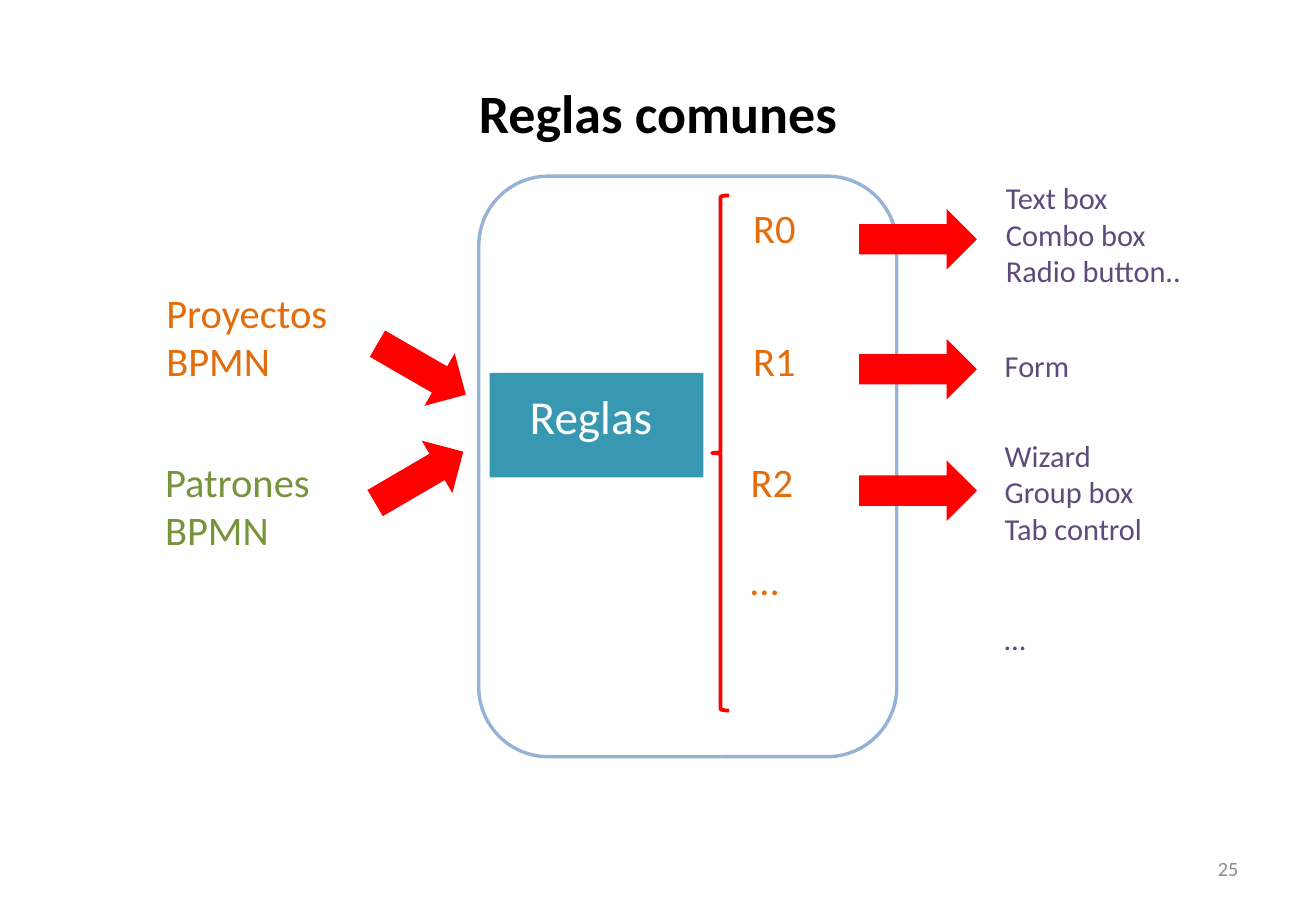
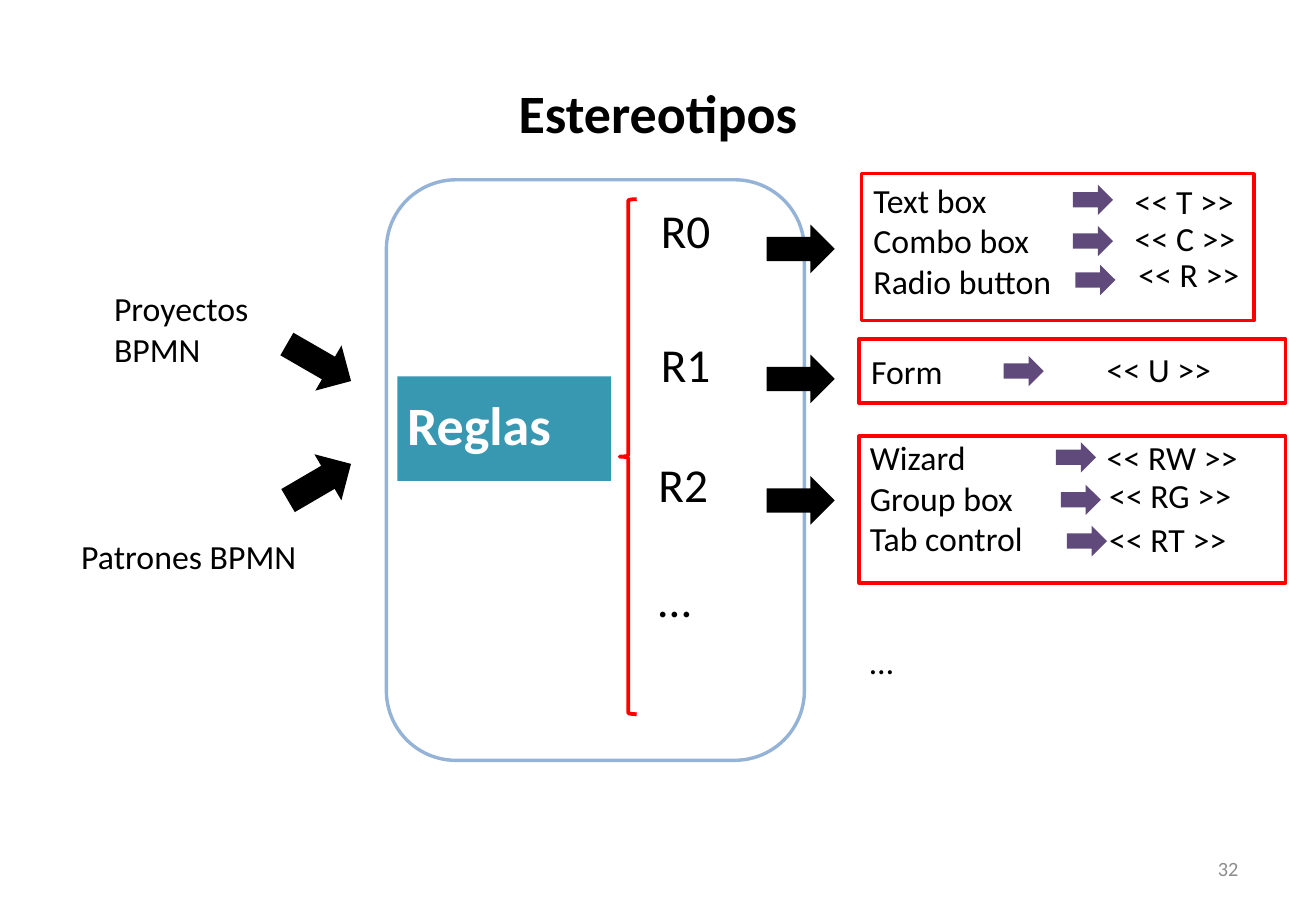
from pptx import Presentation
from pptx.dml.color import RGBColor
from pptx.enum import shapes, text
from pptx.util import Inches, Pt

FONT = "Calibri"
LINE_HEIGHT = 1.22  # of the font size
COLORS = {
    "black": "000000", "white": "FFFFFF", "grey": "8C8C8C", "red": "FF0000",
    "teal": "3898B2", "frame": "95B3D7", "orange": "E46C0A",
    "green": "77933C", "purple": "604A7B",
}
SHAPE = shapes.MSO_SHAPE
ALIGN = text.PP_ALIGN
ANCHOR = text.MSO_ANCHOR


def rgb(name):
    return RGBColor.from_string(COLORS[name])


def write(frame, lines, size, color, bold=False, align=ALIGN.LEFT, skip=0):
    """Fill a text frame; skip is the number of lines left free above the last one."""
    for index, line in enumerate(lines):
        para = frame.paragraphs[0] if index == 0 else frame.add_paragraph()
        para.text = line
        para.alignment = align
        para.font.name, para.font.size, para.font.bold = FONT, Pt(size), bold
        para.font.color.rgb = rgb(color)
    if skip:
        para.space_before = Pt(round(skip * size * LINE_HEIGHT, 1))


def add_text(page, box, lines, size, color, anchor=ANCHOR.TOP, **style):
    frame = page.shapes.add_textbox(*map(Inches, box)).text_frame
    frame.word_wrap = True
    frame.vertical_anchor = anchor
    write(frame, lines, size, color, **style)


def add_shape(page, kind, box, fill=None, line=None, width=2, angle=0):
    shape = page.shapes.add_shape(kind, *map(Inches, box))
    shape.shadow.inherit = False
    shape.rotation = angle
    if fill:
        shape.fill.solid()
        shape.fill.fore_color.rgb = rgb(fill)
    else:
        shape.fill.background()
    if line:
        shape.line.color.rgb = rgb(line)
        shape.line.width = Pt(width)
    else:
        shape.line.fill.background()
    return shape


def add_arrow(page, box, color, angle=0):
    add_shape(page, SHAPE.RIGHT_ARROW, box, fill=color, angle=angle)


def start_page(deck, title, number):
    """Blank page with the shared title and page number."""
    page = deck.slides.add_slide(deck.slide_layouts[6])
    add_text(page, (0.54, 0.3, 9.75, 1.25), [title], 32, "black",
             anchor=ANCHOR.MIDDLE, bold=True, align=ALIGN.CENTER)
    add_text(page, (7.76, 6.95, 2.53, 0.4), [number], 12, "grey",
             anchor=ANCHOR.MIDDLE, align=ALIGN.RIGHT)
    return page


def add_inputs(page, labels, arrows, size, color):
    """Labels (left, top, lines, colour) and the slanted arrows to the rules."""
    for left, top, lines, label_color in labels:
        height = 0.1 + len(lines) * size * LINE_HEIGHT / 72
        add_text(page, (left, top, 2.72, height), lines, size, label_color)
    for box, angle in zip(arrows, (30, 329.7)):
        add_arrow(page, box, color, angle)


def add_rules(page, left, top, heading, labels, arrows):
    """Rounded frame holding the heading block, the brace and the rules."""
    block = add_shape(page, SHAPE.RECTANGLE, (left + 0.09, top + 1.62, 1.76, 0.86),
                      fill="teal")
    frame = block.text_frame
    frame.vertical_anchor = ANCHOR.TOP
    frame.margin_left, frame.margin_top = Inches(heading["inset"]), Inches(0.12)
    write(frame, ["Reglas"], heading["size"], "white", bold=heading["bold"])

    add_shape(page, SHAPE.ROUNDED_RECTANGLE, (left, top, 3.44, 4.78), line="frame")
    add_shape(page, SHAPE.LEFT_BRACE, (left + 1.92, top + 0.16, 0.14, 4.24),
              line="red", width=2.25)

    # Rules, the last one followed by an ellipsis
    rules = ((2.16, 0, ["R0"], 0), (2.16, 1.1, ["R1"], 0), (2.14, 2.09, ["R2", "…"], 1))
    for shift, drop, lines, skip in rules:
        add_text(page, (left + shift, top + labels["top"] + drop, 1.3, 0.5),
                 lines, labels["size"], labels["color"], skip=skip)

    # Arrows leaving the frame
    width, height = arrows["size"]
    for drop in (0, 1.07, 2.07):
        add_arrow(page, (left + 3.13, top + arrows["top"] + drop, width, height),
                  arrows["color"])


def add_outputs(page, groups, size, color):
    """Interface elements: (left, top, lines, free lines above the last)."""
    for left, top, lines, skip in groups:
        height = 0.1 + (len(lines) + skip) * size * LINE_HEIGHT / 72
        add_text(page, (left, top, 2.34, height), lines, size, color, skip=skip)


def add_stereotypes(page, box, tags):
    """Red box whose tags are (arrow x, arrow y, tag x, tag y, name) inside it."""
    left, top = box[:2]
    for arrow_x, arrow_y, tag_x, tag_y, name in tags:
        add_text(page, (left + tag_x, top + tag_y, 1.5, 0.44), [f"<< {name} >>"],
                 20, "black")
        add_arrow(page, (left + arrow_x, top + arrow_y, 0.33, 0.25), "purple")
    add_shape(page, SHAPE.RECTANGLE, box, line="red")


def build_common_rules(deck):
    page = start_page(deck, "Reglas comunes", "25")
    add_inputs(page,
               [(1.27, 2.32, ["Proyectos", "BPMN"], "orange"),
                (1.26, 3.71, ["Patrones", "BPMN"], "green")],
               [(3.05, 2.79, 0.84, 0.5), (3.03, 3.68, 0.84, 0.5)], 24, "red")
    add_rules(page, 3.94, 1.45,
              heading={"inset": 0.33, "size": 28, "bold": False},
              labels={"top": 0.17, "size": 24, "color": "orange"},
              arrows={"top": 0.27, "size": (0.97, 0.5), "color": "red"})
    add_outputs(page,
                [(8.18, 1.43, ["Text box", "Combo box", "Radio button.."], 0),
                 (8.17, 2.81, ["Form"], 0),
                 (8.17, 3.55, ["Wizard", "Group box", "Tab control", "…"], 2)],
                18, "purple")


def build_stereotypes(deck):
    page = start_page(deck, "Estereotipos", "32")
    add_inputs(page,
               [(0.84, 2.32, ["Proyectos", "BPMN"], "black"),
                (0.57, 4.36, ["Patrones BPMN"], "black")],
               [(2.32, 2.77, 0.61, 0.43), (2.33, 3.75, 0.6, 0.44)], 20, "black")
    add_rules(page, 3.18, 1.48,
              heading={"inset": 0.08, "size": 32, "bold": True},
              labels={"top": 0.13, "size": 28, "color": "black"},
              arrows={"top": 0.37, "size": (0.56, 0.4), "color": "black"})
    add_outputs(page,
                [(7.09, 1.43, ["Text box", "Combo box", "Radio button"], 0),
                 (7.07, 2.84, ["Form"], 0),
                 (7.06, 3.55, ["Wizard", "Group box", "Tab control", "…"], 2)],
                20, "black")
    add_stereotypes(page, (7.09, 1.43, 3.23, 1.21),
                    [(1.74, 0.09, 2.15, 0.01, "T"),
                     (1.74, 0.43, 2.15, 0.31, "C"),
                     (1.76, 0.75, 2.18, 0.61, "R")])
    add_stereotypes(page, (7.07, 2.79, 3.51, 0.53), [(1.19, 0.14, 1.94, 0.03, "U")])
    add_stereotypes(page, (7.07, 3.59, 3.51, 1.21),
                    [(1.62, 0.05, 1.94, -0.04, "RW"),
                     (1.66, 0.4, 1.96, 0.27, "RG"),
                     (1.71, 0.74, 1.96, 0.63, "RT")])


def main():
    deck = Presentation()
    deck.slide_width, deck.slide_height = Inches(10.83), Inches(7.5)
    build_common_rules(deck)
    build_stereotypes(deck)
    deck.save("out.pptx")


if __name__ == "__main__":
    main()
